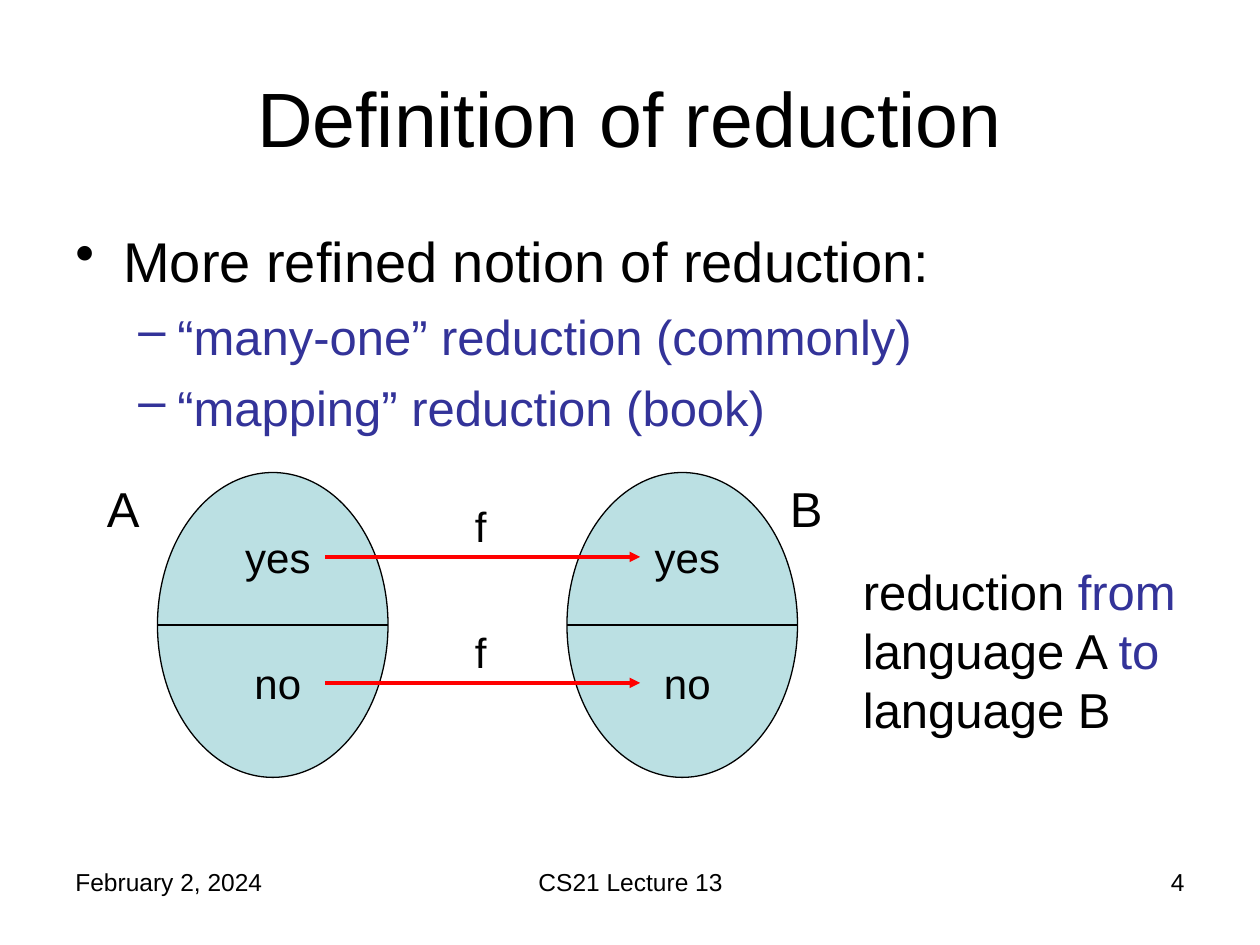
import pptx
import pptx.util
import pptx.dml.color
import pptx.enum.shapes
import pptx.enum.text
import pptx.oxml
import pptx.oxml.ns
from pptx.util import Inches, Pt

BLACK, BLUE, RED, TEAL = "000000", "333399", "FF0000", "BBE0E3"
ALIGN = pptx.enum.text.PP_ALIGN
ANCHOR = pptx.enum.text.MSO_ANCHOR

TITLE = "Definition of reduction"
# text, bullet, size, colour, left margin, hanging indent
OUTLINE = [
    ("More refined notion of reduction:", "•", 32, BLACK, 0.38, 0.38),
    ("“many-one” reduction (commonly)", "–", 28, BLUE, 0.81, 0.31),
    ("“mapping” reduction (book)", "–", 28, BLUE, 0.81, 0.31),
]
SUMMARY = [("reduction ", BLACK), ("from", BLUE), (" language A ", BLACK),
           ("to", BLUE), (" language B", BLACK)]
FOOTER = [("February 2, 2024", 0.5, 2.33, ALIGN.LEFT),
          ("CS21 Lecture 13", 3.42, 3.17, ALIGN.CENTER),
          ("4", 7.17, 2.33, ALIGN.RIGHT)]
# language, left of its name, left of its ellipse
LANGUAGES = [("A", 0.75, 1.25), ("B", 6.17, 4.5)]
ANSWERS = [("yes", 4.17), ("no", 5.17)]
MAPPING = "f"

SET_TOP, SET_WIDTH, SET_HEIGHT = 3.75, 1.83, 2.42
ANSWER_WIDTH, ANSWER_HEIGHT = 0.75, 0.5
ANSWER_INSET = 0.58


def color(value):
    return pptx.dml.color.RGBColor.from_string(value)


def add_span(para, text, size, fill=BLACK):
    span = para.add_run()
    span.text = text
    span.font.name = "Arial"
    span.font.size = Pt(size)
    span.font.color.rgb = color(fill)


def add_text(page, text, left, top, width, height, size=28,
             align=ALIGN.LEFT, anchor=ANCHOR.TOP):
    """Add a text box; text is a string or a list of (text, colour) spans."""
    box = page.shapes.add_textbox(Inches(left), Inches(top), Inches(width), Inches(height))
    frame = box.text_frame
    frame.word_wrap = True
    frame.vertical_anchor = anchor
    para = frame.paragraphs[0]
    para.alignment = align
    for words, fill in [(text, BLACK)] if isinstance(text, str) else text:
        add_span(para, words, size, fill)
    return box


def add_outline(page, left, top, width, height):
    frame = add_text(page, [], left, top, width, height).text_frame
    for index, (text, bullet, size, fill, margin, hanging) in enumerate(OUTLINE):
        para = frame.add_paragraph() if index else frame.paragraphs[0]
        if index:
            para.space_before = Pt(7)
        add_span(para, text, size, fill)
        properties = para._p.get_or_add_pPr()
        properties.set("marL", str(Inches(margin)))
        properties.set("indent", str(-Inches(hanging)))
        mark = pptx.oxml.ns.qn("a:buChar")
        properties.append(properties.makeelement(mark, {"char": bullet}))


def add_line(page, left, right, y, fill, width, arrow=False):
    line = page.shapes.add_connector(
        pptx.enum.shapes.MSO_CONNECTOR.STRAIGHT,
        Inches(left), Inches(y), Inches(right), Inches(y))
    line.line.color.rgb = color(fill)
    line.line.width = Pt(width)
    if arrow:
        outline = line.line._get_or_add_ln()
        tail = pptx.oxml.ns.qn("a:tailEnd")
        outline.append(outline.makeelement(tail, {"type": "triangle"}))
    properties = line._element.spPr
    properties.append(properties.makeelement(pptx.oxml.ns.qn("a:effectLst"), {}))


def add_set(page, left):
    """Add an ellipse split in two halves."""
    ellipse = page.shapes.add_shape(
        pptx.enum.shapes.MSO_SHAPE.OVAL, Inches(left), Inches(SET_TOP),
        Inches(SET_WIDTH), Inches(SET_HEIGHT))
    ellipse.shadow.inherit = False
    ellipse.fill.solid()
    ellipse.fill.fore_color.rgb = color(TEAL)
    ellipse.line.color.rgb = color(BLACK)
    ellipse.line.width = Pt(0.75)
    add_line(page, left, left + SET_WIDTH, SET_TOP + SET_HEIGHT / 2, BLACK, 0.75)


def add_diagram(page):
    for name, name_left, set_left in LANGUAGES:
        add_set(page, set_left)
        add_text(page, name, name_left, SET_TOP, 0.58, 0.57)
        for answer, top in ANSWERS:
            add_text(page, answer, set_left + ANSWER_INSET, top,
                     ANSWER_WIDTH, ANSWER_HEIGHT, size=24, align=ALIGN.CENTER)
    source, target = (set_left + ANSWER_INSET for _, _, set_left in LANGUAGES)
    for _, top in ANSWERS:
        add_line(page, source + ANSWER_WIDTH, target, top + 0.25, RED, 2, arrow=True)
        add_text(page, MAPPING, 3.67, top - 0.25, 0.58, 0.5, size=24)


def main():
    deck = pptx.Presentation()
    deck.slide_width, deck.slide_height = Inches(10), Inches(7.5)
    page = deck.slides.add_slide(deck.slide_layouts[6])
    for text, left, width, align in FOOTER:
        add_text(page, text, left, 6.83, width, 0.52, size=14, align=align)
    add_text(page, TITLE, 0.5, 0.3, 9, 1.25, size=44,
             align=ALIGN.CENTER, anchor=ANCHOR.MIDDLE)
    add_outline(page, 0.5, 1.75, 9, 1.83)
    add_diagram(page)
    add_text(page, SUMMARY, 6.75, 4.41, 2.75, 1.5)
    deck.save("out.pptx")


if __name__ == "__main__":
    main()
